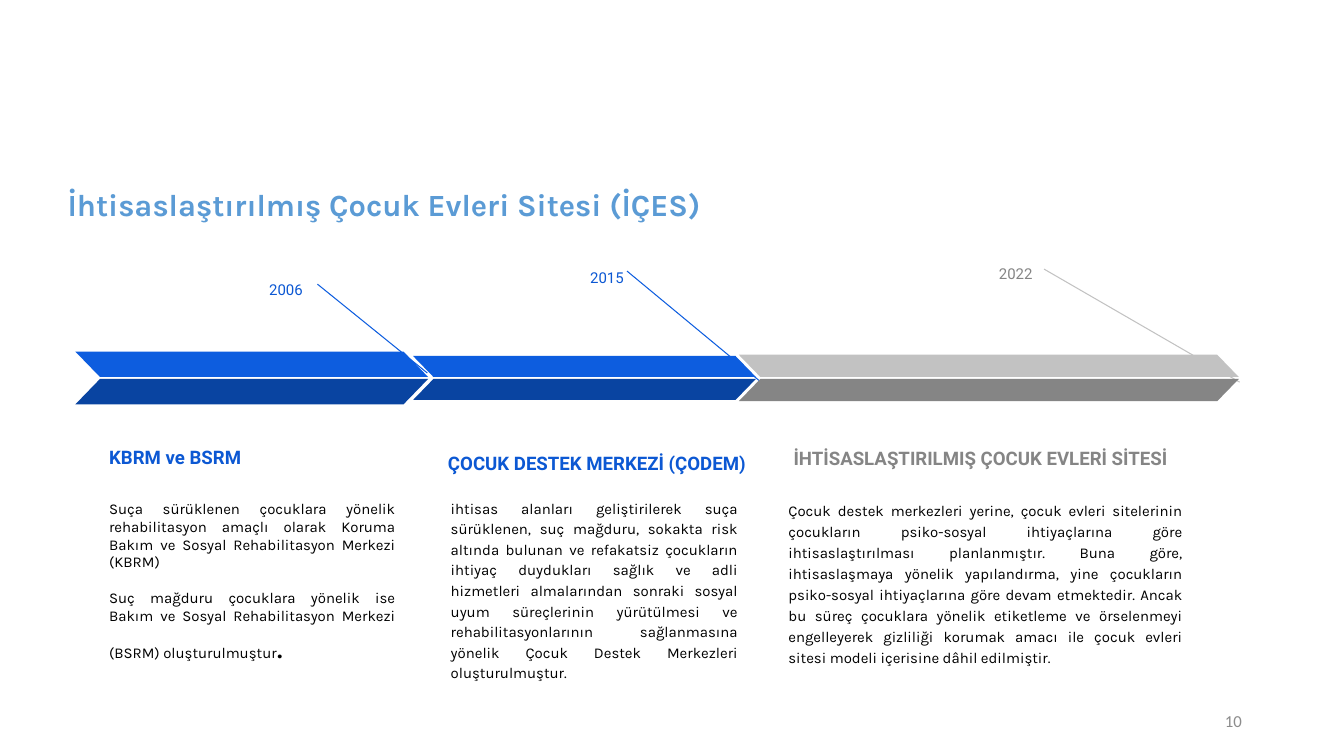
from typing import NamedTuple

from lxml.etree import SubElement
from pptx import Presentation
from pptx.dml.color import RGBColor
from pptx.enum.shapes import MSO_CONNECTOR, MSO_SHAPE
from pptx.enum.text import MSO_ANCHOR, MSO_AUTO_SIZE, PP_ALIGN
from pptx.oxml.ns import qn
from pptx.util import Cm, Pt

BLUE_TEXT = RGBColor(0x0C, 0x58, 0xD3)
BLUE = RGBColor(0x0D, 0x5D, 0xDF)
DARK_BLUE = RGBColor(0x09, 0x44, 0xA1)
LIGHT_GRAY = RGBColor(0xC2, 0xC2, 0xC2)
GRAY = RGBColor(0x85, 0x85, 0x85)
TITLE_BLUE = RGBColor(0x5B, 0x9B, 0xD5)
NUMBER_GRAY = RGBColor(0x8C, 0x8C, 0x8C)
BLACK = RGBColor(0, 0, 0)

TITLE_ONLY = 5
STAGE_INSET = 0.34
UPPER_BOTTOM, LOWER_TOP = 9.5, 9.55  # the two halves of the timeline, in cm


class Stage(NamedTuple):
    """One period of the timeline; boxes are left, top, width, height in cm."""
    year: str
    year_box: tuple
    heading: str
    heading_box: tuple
    body: list
    body_box: tuple
    body_spacing: float
    pointer: tuple
    bar: tuple  # left, width, height of each half
    text_color: RGBColor
    upper_color: RGBColor
    lower_color: RGBColor


STAGES = [
    Stage("2006", (4.95, 6.73, 3.02, 1.07),
          "KBRM ve BSRM", (2.41, 10.16, 7.29, 1.96),
          ["Suça sürüklenen çocuklara yönelik rehabilitasyon amaçlı olarak Koruma "
           "Bakım ve Sosyal Rehabilitasyon Merkezi (KBRM)",
           "Suç mağduru çocuklara yönelik ise Bakım ve Sosyal Rehabilitasyon "
           "Merkezi (BSRM) oluşturulmuştur"],
          (2.41, 12.24, 7.9, 4.19), 1.0,
          (8, 7.16, 10.77, 9.4), (1.9, 8.89, 0.64),
          BLUE_TEXT, BLUE, DARK_BLUE),
    Stage("2015", (13.11, 6.45, 2.95, 0.91),
          "ÇOCUK DESTEK MERKEZİ (ÇODEM)", (10.95, 10.57, 8.25, 1.7),
          ["ihtisas alanları geliştirilerek suça sürüklenen, suç mağduru, sokakta "
           "risk altında bulunan ve refakatsiz çocukların ihtiyaç duydukları sağlık "
           "ve adli hizmetleri almalarından sonraki sosyal uyum süreçlerinin "
           "yürütülmesi ve rehabilitasyonlarının sağlanmasına yönelik Çocuk Destek "
           "Merkezleri oluşturulmuştur."],
          (11.02, 12.17, 7.92, 2.79), 1.15,
          (15.8, 6.83, 19.18, 9.63), (10.41, 8.64, 0.53),
          BLUE_TEXT, BLUE, DARK_BLUE),
    Stage("2022", (22.07, 6.35, 4.29, 0.91),
          "İHTİSASLAŞTIRILMIŞ ÇOCUK EVLERİ SİTESİ", (19.66, 10.46, 10.34, 1.7),
          ["Çocuk destek merkezleri yerine, çocuk evleri sitelerinin çocukların "
           "psiko-sosyal ihtiyaçlarına göre ihtisaslaştırılması planlanmıştır. Buna "
           "göre, ihtisaslaşmaya yönelik yapılandırma, yine çocukların psiko-sosyal "
           "ihtiyaçlarına göre devam etmektedir. Ancak bu süreç çocuklara yönelik "
           "etiketleme ve örselenmeyi engelleyerek gizliliği korumak amacı ile çocuk "
           "evleri sitesi modeli içerisine dâhil edilmiştir."],
          (19.53, 12.22, 10.62, 2.82), 1.17,
          (26.31, 6.78, 31.24, 9.63), (18.62, 12.6, 0.56),
          GRAY, LIGHT_GRAY, GRAY),
]


def format_runs(paragraph, font, size, color, bold=False):
    for run in paragraph.runs:
        run.font.name = font
        run.font.size = Pt(size)
        run.font.color.rgb = color
        run.font.bold = bold


def add_text(slide, box, lines, font, size, color, bold=False, spacing=1.15,
             align=PP_ALIGN.LEFT, anchor=MSO_ANCHOR.TOP, inset=STAGE_INSET):
    frame = slide.shapes.add_textbox(*map(Cm, box)).text_frame
    frame.word_wrap = True
    frame.vertical_anchor = anchor
    frame.margin_left = frame.margin_right = Cm(inset)
    frame.margin_top = frame.margin_bottom = Cm(inset)
    frame.text = "\n".join(lines)
    for paragraph in frame.paragraphs:
        paragraph.alignment = align
        paragraph.line_spacing = spacing
        format_runs(paragraph, font, size, color, bold)
    for paragraph in frame.paragraphs[1:]:
        paragraph.space_before = Pt(12.8)
    return frame


def add_pointer(slide, ends, color):
    pointer = slide.shapes.add_connector(MSO_CONNECTOR.STRAIGHT, *map(Cm, ends))
    pointer.line.color.rgb = color
    pointer.line.width = Pt(0.75)
    SubElement(pointer._element.spPr, qn("a:effectLst"))


def add_half_bar(slide, left, top, width, height, color, mirrored=False):
    half = slide.shapes.add_shape(MSO_SHAPE.PARALLELOGRAM,
                                  Cm(left), Cm(top), Cm(width), Cm(height))
    half.adjustments[0] = 0.97
    half.shadow.inherit = False
    half.fill.solid()
    half.fill.fore_color.rgb = color
    half.line.fill.background()
    if mirrored:
        half._element.spPr.find(qn("a:xfrm")).set("flipH", "1")


def add_stage(slide, stage):
    add_text(slide, stage.year_box, [stage.year], "Roboto", 10.7,
             stage.text_color, align=PP_ALIGN.RIGHT)
    add_text(slide, stage.heading_box, [stage.heading], "Roboto", 13.3,
             stage.text_color, bold=True, anchor=MSO_ANCHOR.BOTTOM)
    body = add_text(slide, stage.body_box, stage.body, "Karla", 10.7, BLACK,
                    spacing=stage.body_spacing, align=PP_ALIGN.JUSTIFY)
    add_pointer(slide, stage.pointer, stage.upper_color)
    left, width, height = stage.bar
    add_half_bar(slide, left, UPPER_BOTTOM - height, width, height,
                 stage.upper_color, mirrored=True)
    add_half_bar(slide, left, LOWER_TOP, width, height, stage.lower_color)
    return body


def add_large_period(paragraph):
    period = paragraph.add_run()
    period.text = "."
    period.font.name = "Karla"
    period.font.size = Pt(24)
    period.font.color.rgb = BLACK


def set_title(slide, text):
    title = slide.shapes.title
    title.left, title.top, title.width, title.height = map(
        Cm, (1.45, 2.06, 29.21, 3.68))
    frame = title.text_frame
    frame.text = text
    frame.word_wrap = True
    frame.auto_size = MSO_AUTO_SIZE.NONE
    frame.vertical_anchor = MSO_ANCHOR.BOTTOM
    heading = frame.paragraphs[0]
    heading.alignment = PP_ALIGN.JUSTIFY
    heading.line_spacing = 1.17
    format_runs(heading, "Karla", 22, TITLE_BLUE, bold=True)


def main():
    deck = Presentation()
    deck.slide_width, deck.slide_height = Cm(33.87), Cm(19.05)
    slide = deck.slides.add_slide(deck.slide_layouts[TITLE_ONLY])
    set_title(slide, "İhtisaslaştırılmış Çocuk Evleri Sitesi (İÇES)")
    bodies = [add_stage(slide, stage) for stage in STAGES]
    add_large_period(bodies[0].paragraphs[-1])
    add_text(slide, (23.93, 17.65, 7.62, 1.02), ["10"], "Calibri", 12,
             NUMBER_GRAY, spacing=1.0, align=PP_ALIGN.RIGHT,
             anchor=MSO_ANCHOR.MIDDLE, inset=0.25)
    deck.save("out.pptx")


if __name__ == "__main__":
    main()
